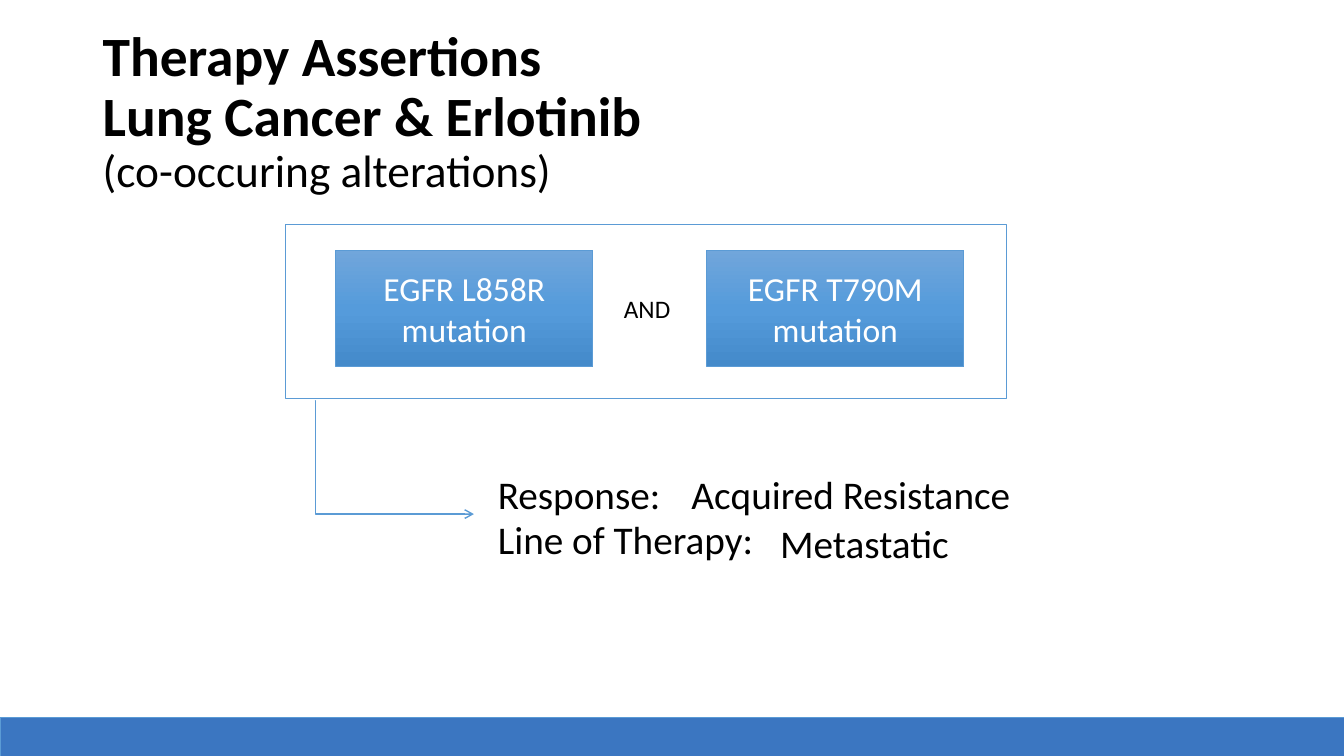
from pptx import Presentation
from pptx.dml.color import RGBColor
from pptx.enum.shapes import MSO_CONNECTOR as Connector, MSO_SHAPE as Shape
from pptx.enum.text import MSO_ANCHOR as Anchor, MSO_AUTO_SIZE as AutoSize, PP_ALIGN as Align
from pptx.oxml.ns import qn
from pptx.util import Inches, Pt
from copy import deepcopy
from lxml.etree import SubElement

BLACK = RGBColor(0x00, 0x00, 0x00)
WHITE = RGBColor(0xFF, 0xFF, 0xFF)
LINE_BLUE = RGBColor(0x5B, 0x9B, 0xD5)
FOOTER_BLUE = RGBColor(0x3B, 0x76, 0xC1)
GRADIENT = [(0, RGBColor(0x71, 0xA6, 0xDB)),
            (0.5, RGBColor(0x55, 0x9B, 0xDB)),
            (1, RGBColor(0x44, 0x8A, 0xCA))]

# Content
TITLE_LINES = [("Therapy Assertions", 39.6, True),
               ("Lung Cancer & Erlotinib", 39.6, True),
               ("(co-occuring alterations)", 32.4, False)]
MUTATIONS = [(3.33, "EGFR L858R mutation"), (7.01, "EGFR T790M mutation")]
LABELS = [  # text, size, left, top, width, height
    ("AND", 18, 6.09, 2.86, 0.67, 0.4),
    ("Response:", 28, 4.84, 4.62, 1.84, 0.57),
    ("Acquired Resistance", 28, 6.76, 4.62, 3.42, 0.57),
    ("Line of Therapy:", 28, 4.84, 5.06, 2.77, 0.57),
    ("Metastatic", 28, 7.64, 5.1, 1.91, 0.57),
]

deck = Presentation()
deck.slide_width, deck.slide_height = Inches(13.33), Inches(7.5)
page = deck.slides.add_slide(deck.slide_layouts[6])


def add_span(para, text, size, color=BLACK, bold=False):
    span = para.add_run()
    span.text = text
    for name, value in {"name": "Calibri", "size": Pt(size), "bold": bold}.items():
        setattr(span.font, name, value)
    span.font.color.rgb = color


def add_rectangle(*place):
    box = page.shapes.add_shape(Shape.RECTANGLE, *map(Inches, place))
    box.shadow.inherit = False
    box.fill.background()
    box.line.color.rgb = LINE_BLUE
    box.line.width = Pt(0.5)
    return box


def fill_gradient(box):
    box.fill.gradient()
    box.fill.gradient_angle = 270
    first = box._element.xpath(".//a:gs")[0]
    first.addnext(deepcopy(first))
    for stop, (position, color) in zip(box.fill.gradient_stops, GRADIENT):
        stop.position = position
        stop.color.rgb = color


# Footer band
footer = add_rectangle(0, 7.12, 13.33, 0.41)
footer.fill.solid()
footer.fill.fore_color.rgb = FOOTER_BLUE

# Frame with the two mutations
add_rectangle(2.83, 2.23, 7.15, 1.72)
for left, text in MUTATIONS:
    box = add_rectangle(left, 2.48, 2.55, 1.16)
    fill_gradient(box)
    box.text_frame.vertical_anchor = Anchor.MIDDLE
    para = box.text_frame.paragraphs[0]
    para.alignment = Align.CENTER
    add_span(para, text, 24, WHITE)

# Elbow arrow from the frame to the response
arrow = page.shapes.add_connector(Connector.ELBOW, *map(Inches, (3.12, 3.98, 4.7, 5.1)))
arrow.line.color.rgb = LINE_BLUE
arrow.line.width = Pt(1)
SubElement(arrow.line._get_or_add_ln(), qn("a:tailEnd"), type="arrow")
SubElement(arrow._element.spPr, qn("a:effectLst"))
bend = arrow._element.spPr.find(qn("a:prstGeom")).get_or_add_avLst()
SubElement(bend, qn("a:gd"), name="adj1", fmla="val 400")

# Labels
for text, size, *place in LABELS:
    box = page.shapes.add_textbox(*map(Inches, place))
    box.text_frame.word_wrap = False
    box.text_frame.auto_size = AutoSize.SHAPE_TO_FIT_TEXT
    add_span(box.text_frame.paragraphs[0], text, size)

# Title
title = page.shapes.add_textbox(*map(Inches, (0.92, 0.4, 11.5, 1.45)))
title.text_frame.word_wrap = True
title.text_frame.vertical_anchor = Anchor.MIDDLE
para = title.text_frame.paragraphs[0]
para.line_spacing = 0.9
for index, (text, size, bold) in enumerate(TITLE_LINES):
    if index:
        para.add_line_break()
    add_span(para, text, size, bold=bold)

deck.save("out.pptx")
